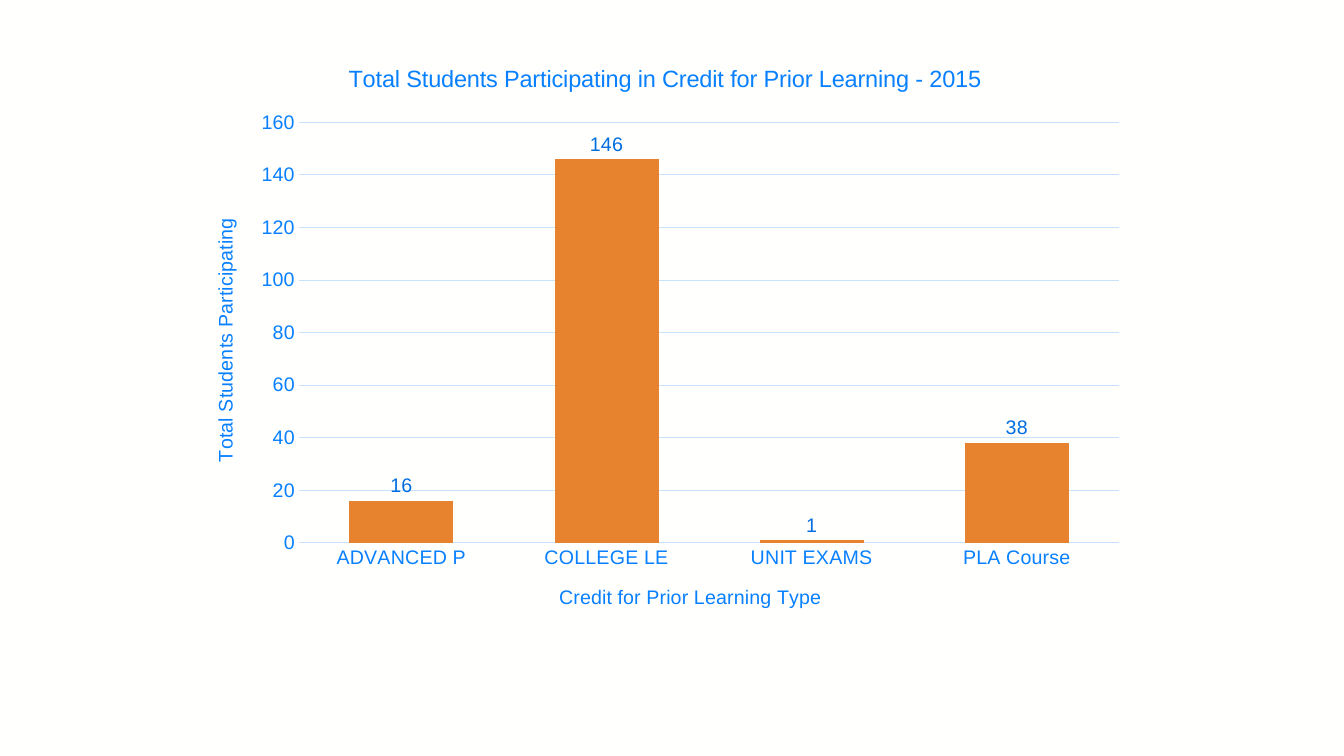
import pptx
import pptx.chart.data
import pptx.dml.color
import pptx.enum.chart
import pptx.oxml
import pptx.oxml.ns
import pptx.util

SLIDE_WIDTH, SLIDE_HEIGHT = pptx.util.Inches(13.33), pptx.util.Inches(7.5)
COLOURS = {
    "background": "FFFFFE",
    "text": "0880FF",
    "label": "006DE1",
    "grid": "C6E2FF",
    "bar": "E7832F",
}
STUDENTS = {"ADVANCED P": 16, "COLLEGE LE": 146, "UNIT EXAMS": 1, "PLA Course": 38}
CHART_SHARES = {"left": 0.142, "top": 0.056, "width": 0.705, "height": 0.779}
PLOT_SHARES = {"x": 0.114, "y": 0.136, "w": 0.866, "h": 0.714}


def colour(name):
    return pptx.dml.color.RGBColor.from_string(COLOURS[name])


def set_all(target, values):
    for name, value in values.items():
        setattr(target, name, value)


def style_font(font, size=14, colour_name="text"):
    set_all(font, {"name": "Arial", "size": pptx.util.Pt(size), "bold": False})
    font.color.rgb = colour(colour_name)


def style_line(line):
    line.color.rgb = colour("grid")
    line.width = pptx.util.Pt(0.75)


def add_title(owner, text, size=14):
    """Title a chart or an axis."""
    frame = owner.chart_title if hasattr(owner, "chart_title") else owner.axis_title
    frame = frame.text_frame
    frame.text = text
    para = frame.paragraphs[0]
    style_font(para.font, size)
    style_font(para.runs[0].font, size)


def style_axis(axis, title):
    no_tick = pptx.enum.chart.XL_TICK_MARK.NONE
    set_all(axis, {"major_tick_mark": no_tick, "minor_tick_mark": no_tick})
    style_font(axis.tick_labels.font)
    add_title(axis, title)


def place_plot(chart):
    """Fix the inner plot area as shares of the chart's size."""
    plot_area = chart.plots[0]._element.getparent()
    for old in plot_area.findall(pptx.oxml.ns.qn("c:layout")):
        plot_area.remove(old)
    shares = "".join(f'<c:{side} val="{share}"/>' for side, share in PLOT_SHARES.items())
    plot_area.insert(0, pptx.oxml.parse_xml(
        f'<c:layout {pptx.oxml.ns.nsdecls("c")}><c:manualLayout>'
        '<c:layoutTarget val="inner"/><c:xMode val="edge"/><c:yMode val="edge"/>'
        f'{shares}</c:manualLayout></c:layout>'))


def style_bars(plot):
    set_all(plot, {"gap_width": 97, "overlap": -27, "vary_by_categories": False})
    series = plot.series[0]
    series.format.fill.solid()
    series.format.fill.fore_color.rgb = colour("bar")
    labels = series.data_labels
    set_all(labels, {
        "show_value": True,
        "position": pptx.enum.chart.XL_LABEL_POSITION.OUTSIDE_END,
    })
    style_font(labels.font, colour_name="label")


def add_student_chart(page):
    data = pptx.chart.data.CategoryChartData()
    data.categories = list(STUDENTS)
    data.add_series("Series 1", list(STUDENTS.values()))
    chart = page.shapes.add_chart(
        pptx.enum.chart.XL_CHART_TYPE.COLUMN_CLUSTERED,
        int(SLIDE_WIDTH * CHART_SHARES["left"]),
        int(SLIDE_HEIGHT * CHART_SHARES["top"]),
        int(SLIDE_WIDTH * CHART_SHARES["width"]),
        int(SLIDE_HEIGHT * CHART_SHARES["height"]),
        data,
    ).chart
    chart.has_legend = False
    style_font(chart.font)
    add_title(chart, "Total Students Participating in Credit for Prior Learning - 2015", 16.8)

    style_axis(chart.category_axis, "Credit for Prior Learning Type")
    style_line(chart.category_axis.format.line)

    value_axis = chart.value_axis
    style_axis(value_axis, "Total Students Participating")
    set_all(value_axis, {"minimum_scale": 0, "maximum_scale": 160, "major_unit": 20})
    value_axis.format.line.fill.background()
    style_line(value_axis.major_gridlines.format.line)

    style_bars(chart.plots[0])
    place_plot(chart)


def main():
    deck = pptx.Presentation()
    set_all(deck, {"slide_width": SLIDE_WIDTH, "slide_height": SLIDE_HEIGHT})
    page = deck.slides.add_slide(deck.slide_layouts[6])
    page.background.fill.solid()
    page.background.fill.fore_color.rgb = colour("background")
    add_student_chart(page)
    deck.save("out.pptx")


if __name__ == "__main__":
    main()
